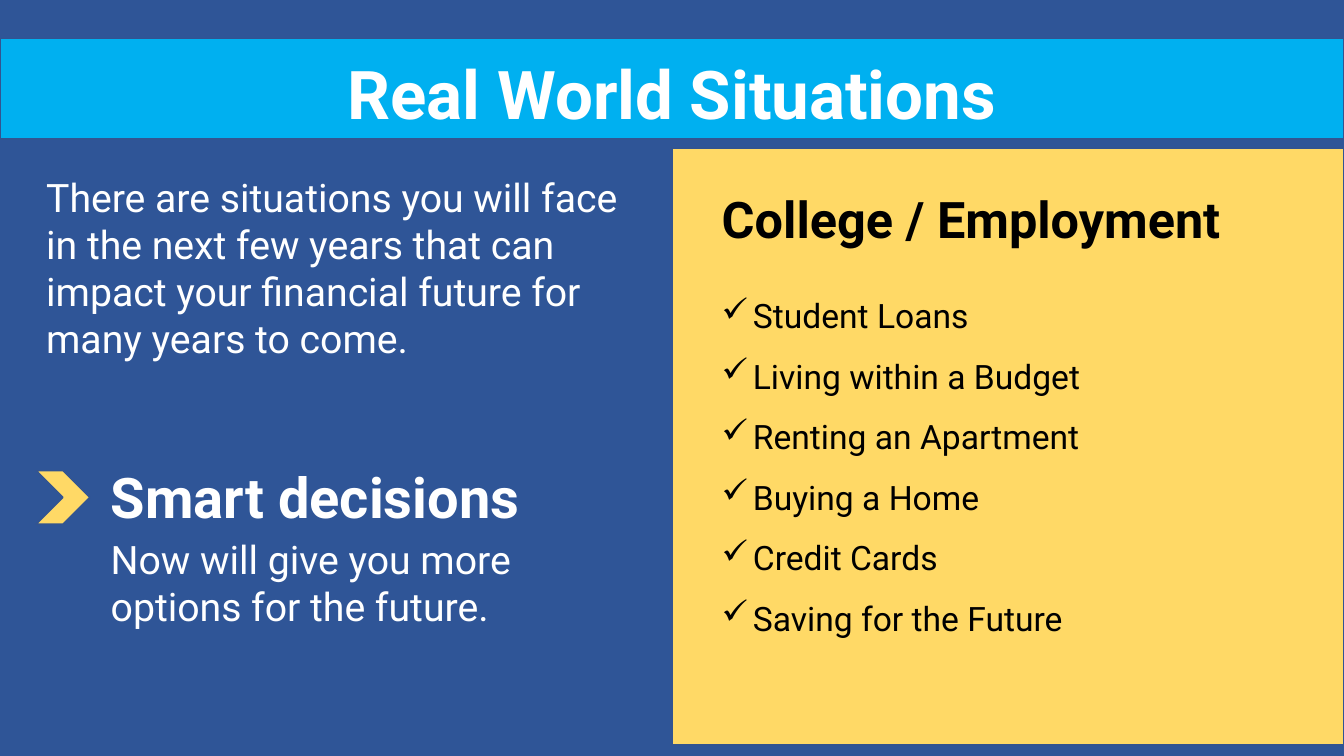
from lxml import etree
from pptx import Presentation
from pptx.dml.color import RGBColor
from pptx.enum.shapes import MSO_SHAPE
from pptx.enum.text import PP_ALIGN
from pptx.oxml.ns import qn
from pptx.util import Inches, Pt

RECTANGLE = MSO_SHAPE.RECTANGLE
CHEVRON = MSO_SHAPE.CHEVRON
LEFT = PP_ALIGN.LEFT
CENTER = PP_ALIGN.CENTER

NAVY = RGBColor(0x2F, 0x55, 0x97)
OUTLINE = RGBColor(0x32, 0x54, 0x91)
SKY = RGBColor(0x00, 0xB0, 0xF0)
GOLD = RGBColor(0xFF, 0xD9, 0x66)
WHITE = RGBColor(0xFF, 0xFF, 0xFF)
BLACK = RGBColor(0x00, 0x00, 0x00)

WIDTH = 13.33
HEIGHT = 7.5
HALF = WIDTH / 2
MARGIN = 0.36
INDENT = 1
PANEL_TEXT = 7.06

deck = Presentation()
deck.slide_width = Inches(WIDTH)
deck.slide_height = Inches(HEIGHT)
page = deck.slides.add_slide(deck.slide_layouts[6])
page.background.fill.solid()
page.background.fill.fore_color.rgb = NAVY


def add_block(preset, left, top, width, height, color):
    block = page.shapes.add_shape(
        preset, Inches(left), Inches(top), Inches(width), Inches(height))
    block.shadow.inherit = False
    block.fill.solid()
    block.fill.fore_color.rgb = color
    block.line.color.rgb = OUTLINE
    block.line.width = Pt(1)


def add_text(left, top, width, height, text, size, color, bold=False, align=LEFT):
    box = page.shapes.add_textbox(
        Inches(left), Inches(top), Inches(width), Inches(height))
    box.text_frame.word_wrap = True
    box.text_frame.text = text
    for para in box.text_frame.paragraphs:
        para.alignment = align
        for span in para.runs:
            span.font.name = "Roboto"
            span.font.size = Pt(size)
            span.font.bold = bold
            span.font.color.rgb = color
    return box


add_block(RECTANGLE, 0, 0.38, WIDTH, 1, SKY)
add_text((WIDTH - 9.78) / 2, 0.47, 9.78, 0.91, "Real World Situations",
         48, WHITE, True, CENTER)

add_text(MARGIN, 1.67, 5.94, 1.99,
         "There are situations you will face in the next few years that can "
         "impact your financial future for many years to come.", 28, WHITE)

add_block(CHEVRON, MARGIN, 4.67, 0.53, 0.53, GOLD)
add_text(INDENT, 4.54, 4.79, 0.77, "Smart decisions", 40, WHITE, True)
add_text(INDENT, 5.26, 5.3, 1.04,
         "Now will give you more options for the future.", 28, WHITE)

add_block(RECTANGLE, HALF, 1.47, HALF, 5.92, GOLD)
add_text(PANEL_TEXT, 1.82, 5.91, 0.71, "College / Employment", 36, BLACK, True)

situations = [
    "Student Loans",
    "Living within a Budget",
    "Renting an Apartment",
    "Buying a Home",
    "Credit Cards",
    "Saving for the Future",
]
checklist = add_text(PANEL_TEXT, 2.68, 5.67, 3.68, "\n".join(situations), 24, BLACK)
for para in checklist.text_frame.paragraphs:
    para.line_spacing = 1.5
    properties = para._p.get_or_add_pPr()
    properties.set("marL", str(Inches(0.31)))
    properties.set("indent", str(-Inches(0.31)))
    etree.SubElement(properties, qn("a:buChar")).set("char", "✓")

deck.save("out.pptx")
